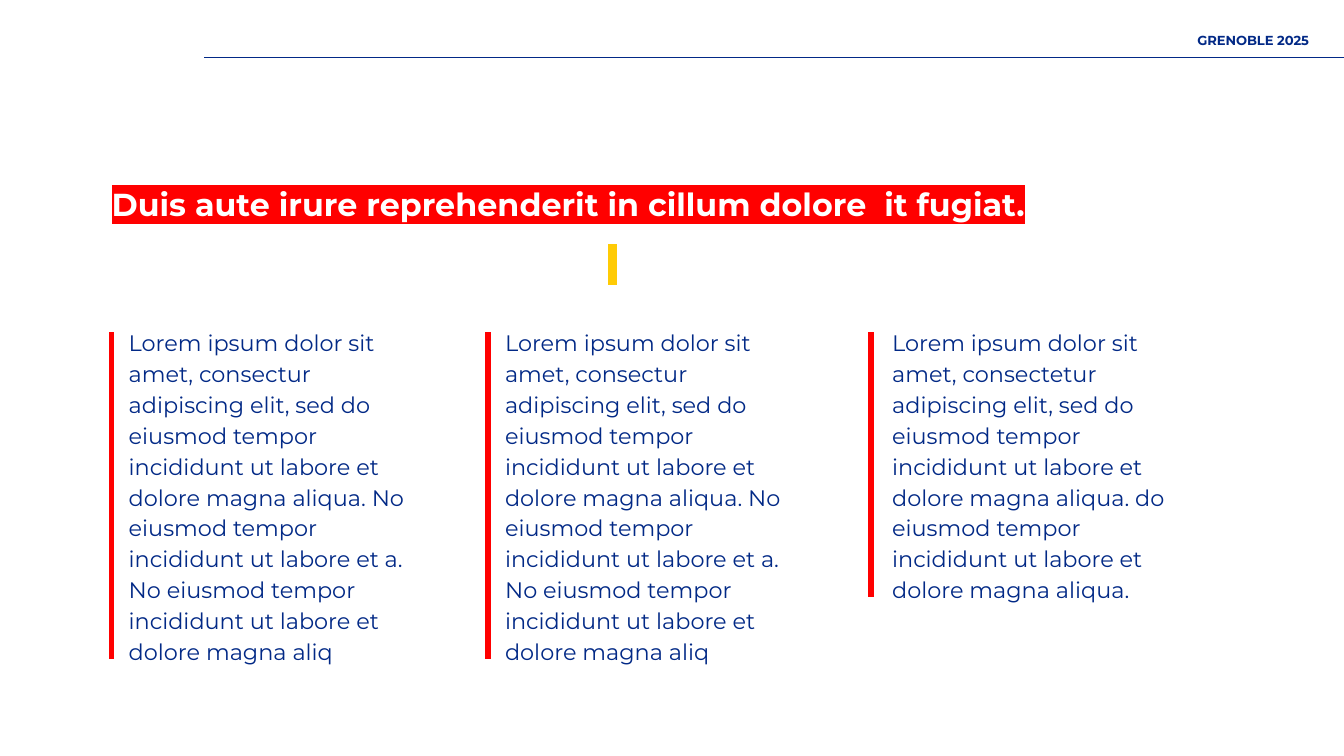
from lxml.etree import SubElement
from pptx import Presentation
from pptx.dml.color import RGBColor
from pptx.enum.shapes import MSO_CONNECTOR as Connector
from pptx.enum.text import MSO_ANCHOR as Anchor, MSO_AUTO_SIZE as AutoSize, PP_ALIGN as Align
from pptx.oxml.ns import qn
from pptx.util import Inches, Pt

COLORS = {"navy": "022986", "red": "FF0000", "yellow": "FFCB05", "white": "FFFFFF",
          "blue": "0000FF"}
FONT = "Montserrat"
TITLE = "Duis aute irure reprehenderit in cillum dolore  it fugiat."
LONG_TEXT = (
    "Lorem ipsum dolor sit amet, consectur adipiscing elit, sed do eiusmod tempor "
    "incididunt ut labore et dolore magna aliqua. No eiusmod tempor incididunt ut "
    "labore et a. No eiusmod tempor incididunt ut labore et dolore magna aliq"
)
SHORT_TEXT = (
    "Lorem ipsum dolor sit amet, consectetur adipiscing elit, sed do eiusmod tempor "
    "incididunt ut labore et dolore magna aliqua. do eiusmod tempor incididunt ut "
    "labore et dolore magna aliqua."
)
COLUMNS = [
    (0.83, 0.86, 2.73, 4.9, LONG_TEXT),
    (3.63, 3.66, 2.73, 4.9, LONG_TEXT),
    (6.48, 6.54, 2.26, 4.44, SHORT_TEXT),
]


def color(name):
    """Return the named colour of the palette."""
    return RGBColor.from_string(COLORS[name])


def place(shape, left, top, width, height):
    """Move and size a shape, in inches."""
    shape.left, shape.top = Inches(left), Inches(top)
    shape.width, shape.height = Inches(width), Inches(height)


def prepare(box, side=0.0):
    """Set wrapping, anchor and margins, and return the first paragraph."""
    frame = box.text_frame
    frame.word_wrap = True
    frame.auto_size = AutoSize.NONE
    frame.vertical_anchor = Anchor.TOP
    frame.margin_left = frame.margin_right = Inches(side)
    frame.margin_top = frame.margin_bottom = Inches(0.1)
    return frame.paragraphs[0]


def write(para, text, size, fill="navy", bold=False, align=Align.LEFT,
          spacing=1.0, before=0, after=0, highlight=None):
    """Fill a paragraph with one formatted run."""
    para.alignment = align
    para.line_spacing = spacing
    para.space_before, para.space_after = Pt(before), Pt(after)
    span = para.add_run()
    span.text = text
    span.font.size = Pt(size)
    span.font.name = FONT
    span.font.bold = bold
    span.font.color.rgb = color(fill)
    if highlight:
        properties = span.font._element
        marker = SubElement(properties, qn("a:highlight"))
        SubElement(marker, qn("a:srgbClr"), val=COLORS[highlight])
        properties.find(qn("a:solidFill")).addnext(marker)


def add_text(page, area, text, size, side=0.0, **style):
    """Add a text box with formatted text."""
    box = page.shapes.add_textbox(*map(Inches, area))
    write(prepare(box, side), text, size, **style)


def add_title(page):
    """Fill the title placeholder with the headline and its yellow mark."""
    title = page.shapes.title
    place(title, 0.83, 1.23, 7.45, 0.99)
    write(prepare(title), TITLE, 17, fill="white", bold=True, spacing=1.15,
          highlight="red")
    write(title.text_frame.add_paragraph(), " ", 18, fill="blue",
          align=Align.CENTER, before=11, highlight="yellow")


def add_rule(page, start, end, fill, width):
    """Draw a straight line without shadow."""
    rule = page.shapes.add_connector(Connector.STRAIGHT, *map(Inches, start + end))
    rule.line.color.rgb = color(fill)
    rule.line.width = Pt(width)
    SubElement(rule._element.spPr, qn("a:effectLst"))


def add_column(page, rule_left, text_left, height, bottom, text):
    """Add a text column with a red rule on its left."""
    add_text(page, (text_left, 2.32, 2.37, height), text, 12,
             side=0.1, spacing=1.15, after=11)
    add_rule(page, (rule_left, bottom), (rule_left, 2.47), "red", 3)


def main():
    """Build and save the slide."""
    deck = Presentation()
    deck.slide_width = Inches(10)
    deck.slide_height = deck.slide_width * 9 // 16
    page = deck.slides.add_slide(deck.slide_layouts[5])

    add_rule(page, (1.52, 0.43), (10.04, 0.43), "navy", 0.75)
    add_text(page, (6.63, 0.14, 3.11, 0.54), "GRENOBLE 2025", 7,
             bold=True, align=Align.RIGHT)
    add_title(page)
    for column in COLUMNS:
        add_column(page, *column)
    deck.save("out.pptx")


if __name__ == "__main__":
    main()
